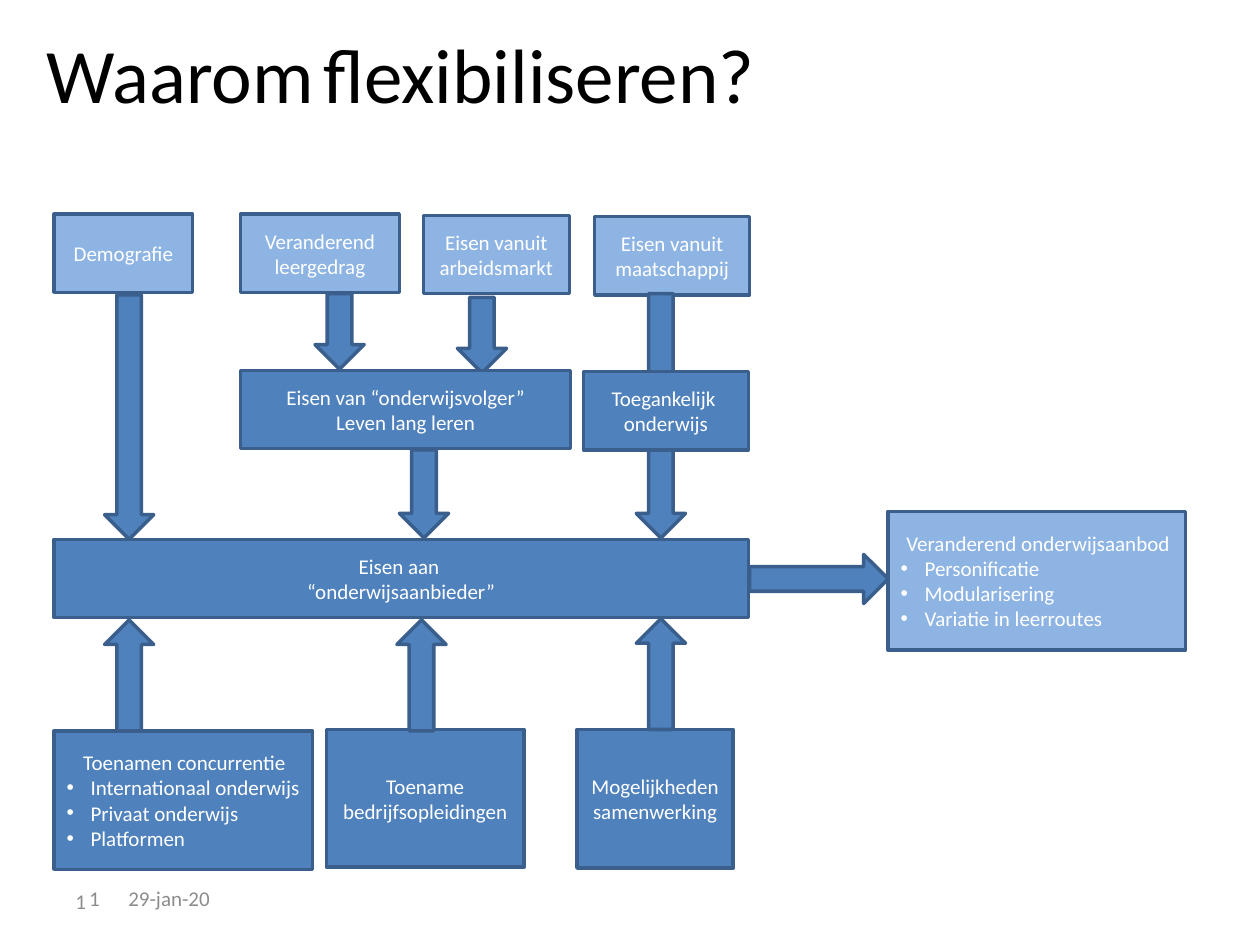
from pptx import Presentation
from pptx.dml.color import RGBColor
from pptx.enum.shapes import MSO_SHAPE as Shape
from pptx.enum.text import MSO_ANCHOR as Anchor, PP_ALIGN as Align
from pptx.oxml.ns import qn
from pptx.util import Inches, Pt
from lxml.etree import SubElement

BLUE = RGBColor(0x4F, 0x81, 0xBD)
LIGHT = RGBColor(0x8E, 0xB4, 0xE3)
EDGE = RGBColor(0x3A, 0x5F, 0x8C)
WHITE = RGBColor(0xFF, 0xFF, 0xFF)
BLACK = RGBColor(0, 0, 0)
GREY = RGBColor(0x8C, 0x8C, 0x8C)
SHAFT = 0.39

# Boxes: left, top, width, height, fill, centred lines, bullets
BOXES = [
    (0.43, 1.7, 1.1, 0.62, LIGHT, ["Demografie"], []),
    (1.91, 1.7, 1.26, 0.62, LIGHT, ["Veranderend leergedrag"], []),
    (3.36, 1.71, 1.16, 0.62, LIGHT, ["Eisen vanuit arbeidsmarkt"], []),
    (4.72, 1.72, 1.23, 0.62, LIGHT, ["Eisen vanuit", "maatschappij"], []),
    (1.91, 2.94, 2.62, 0.62, BLUE,
     ["Eisen van “onderwijsvolger”", "Leven lang leren"], []),
    (0.43, 4.28, 5.51, 0.62, BLUE,
     ["Eisen aan ", "“onderwijsaanbieder”"], []),
    (0.43, 5.8, 2.05, 1.1, BLUE, ["Toenamen concurrentie"],
     ["Internationaal onderwijs", "Privaat onderwijs", "Platformen"]),
    (2.59, 5.79, 1.57, 1.09, BLUE, ["Toename bedrijfsopleidingen"], []),
    (4.58, 5.79, 1.24, 1.1, BLUE, ["Mogelijkheden", "samenwerking"], []),
    (7.05, 4.06, 2.36, 1.1, LIGHT, ["Veranderend onderwijsaanbod"],
     ["Personificatie", "Modularisering", "Variatie in leerroutes"]),
]
ACCESS = (4.63, 2.95, 1.31, 0.62, BLUE, ["Toegankelijk ", "onderwijs"], [])

# Down arrows: left, top, length
BACK = [(3.63, 2.36, 0.6), (3.17, 3.57, 0.7)]
FRONT = [(0.83, 2.34, 1.94), (5.05, 2.33, 1.94), (2.5, 2.33, 0.6)]
# Up arrows: left, top
RISE = [(0.83, 4.92), (3.15, 4.92), (5.05, 4.91)]


def style(run, size, color):
    run.font.name = "Calibri"
    run.font.size = Pt(size)
    run.font.color.rgb = color


def block(slide, kind, left, top, width, height, fill):
    shape = slide.shapes.add_shape(
        kind, Inches(left), Inches(top), Inches(width), Inches(height))
    shape.shadow.inherit = False
    shape.fill.solid()
    shape.fill.fore_color.rgb = fill
    shape.line.color.rgb = EDGE
    shape.line.width = Pt(2)
    return shape


def bullet(para):
    props = para._p.get_or_add_pPr()
    props.set("marL", str(Inches(0.19)))
    props.set("indent", str(-Inches(0.19)))
    SubElement(props, qn("a:buFont")).set("typeface", "Arial")
    SubElement(props, qn("a:buChar")).set("char", "•")


def box(slide, left, top, width, height, fill, heads, items):
    shape = block(slide, Shape.RECTANGLE, left, top, width, height, fill)
    frame = shape.text_frame
    frame.word_wrap = True
    frame.vertical_anchor = Anchor.MIDDLE
    if items:
        frame.margin_right = Inches(0.08)
    frame.text = "\n".join(heads + items)
    for i, para in enumerate(frame.paragraphs):
        if i < len(heads):
            para.alignment = Align.CENTER
        else:
            para.alignment = Align.LEFT
            bullet(para)
        for run in para.runs:
            style(run, 12, WHITE)


def down(slide, left, top, length):
    block(slide, Shape.DOWN_ARROW, left, top, SHAFT, length, BLUE)


def label(slide, left, top, width, height, parts, color, align=Align.LEFT):
    shape = slide.shapes.add_textbox(
        Inches(left), Inches(top), Inches(width), Inches(height))
    frame = shape.text_frame
    frame.word_wrap = True
    frame.vertical_anchor = Anchor.MIDDLE
    para = frame.paragraphs[0]
    para.alignment = align
    for text, size in parts:
        run = para.add_run()
        run.text = text
        style(run, size, color)


def main():
    deck = Presentation()
    deck.slide_width, deck.slide_height = Inches(10), Inches(7.5)
    slide = deck.slides.add_slide(deck.slide_layouts[6])

    # Title and footer
    label(slide, 0.27, 0.09, 7.41, 0.97,
          [("Waarom", 44), (" ", 24), ("flexibiliseren?", 44)], BLACK)
    label(slide, 0.5, 6.95, 2.33, 0.4, [("1", 12)], GREY)
    label(slide, 0.92, 6.98, 1.25, 0.3, [("29-jan-20", 12)], GREY)
    label(slide, 0.43, 6.98, 0.46, 0.3, [("1", 12)], GREY, Align.RIGHT)

    # Arrows whose tips lie behind the boxes
    for spot in BACK:
        down(slide, *spot)

    # Boxes
    for item in BOXES:
        box(slide, *item)

    # Arrows on top of the boxes
    for spot in FRONT:
        down(slide, *spot)
    for left, top in RISE:
        block(slide, Shape.UP_ARROW, left, top, SHAFT, 0.88, BLUE)
    block(slide, Shape.RIGHT_ARROW, 5.95, 4.4, 1.1, SHAFT, BLUE)

    # Box across the long arrow
    box(slide, *ACCESS)

    deck.save("out.pptx")


if __name__ == "__main__":
    main()
